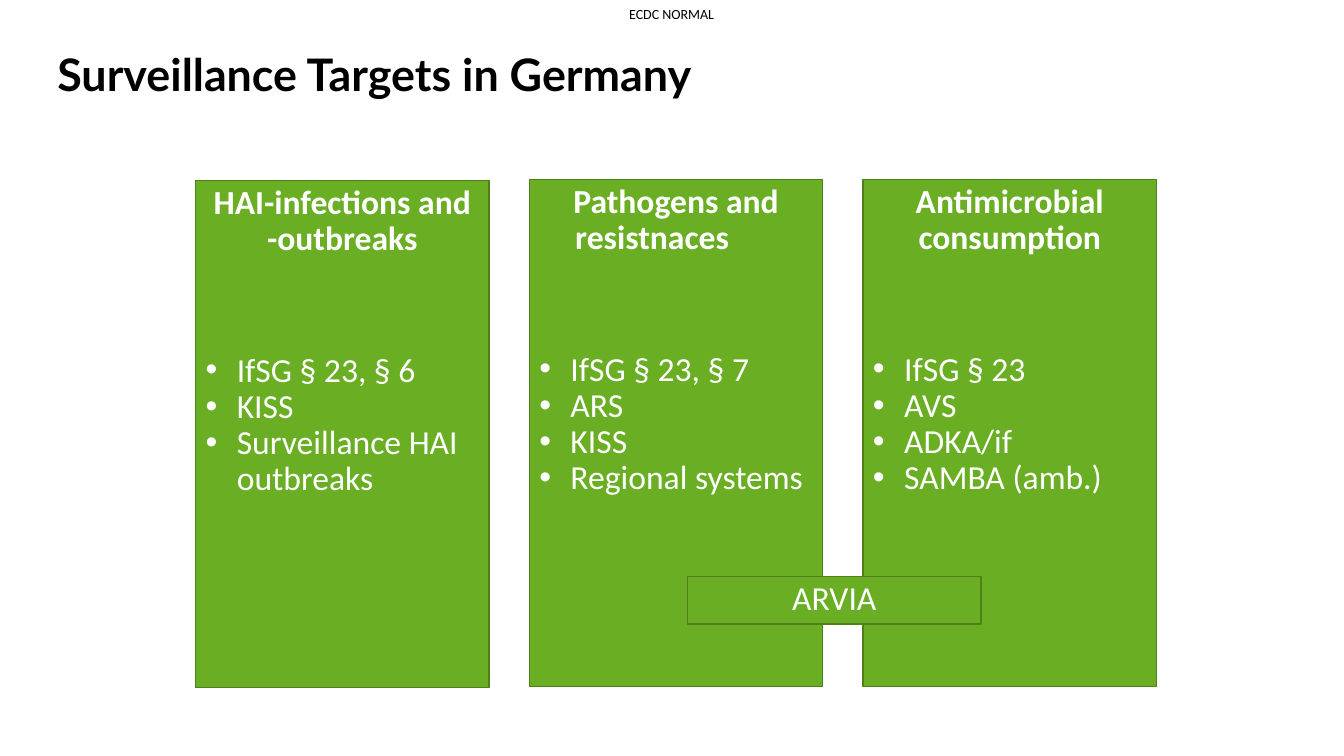
from lxml import etree
from pptx import Presentation
from pptx.dml.color import RGBColor
from pptx.enum import shapes, text
from pptx.oxml import ns
from pptx.util import Inches, Pt

CLASSIFICATION = "ECDC NORMAL"
TITLE = "Surveillance Targets in Germany"
TARGETS = [
    ("HAI-infections and -outbreaks",
     ["IfSG § 23, § 6", "KISS", "Surveillance HAI outbreaks"]),
    ("Pathogens and resistnaces\t",
     ["IfSG § 23, § 7", "ARS", "KISS", "Regional systems"]),
    ("Antimicrobial consumption",
     ["IfSG § 23", "AVS", "ADKA/if", "SAMBA (amb.)"]),
]
SHARED_SYSTEM = "ARVIA"

COLOURS = {"ink": "000000", "panel": "69AE23", "edge": "4E811A", "label": "FFFFFF"}
LEFT, PITCH, WIDTH, HEIGHT = 1.94, 3.31, 2.91, 5.03
TOPS = [1.79, 1.78, 1.78]
INDENT = 0.31
HEADING_GAP = 68


def colour(name):
    return RGBColor.from_string(COLOURS[name])


def write(paragraph, words, size, ink, font="Calibri", bold=False):
    paragraph.line_spacing = 0.9
    run = paragraph.add_run()
    run.text = words
    run.font.name = font
    run.font.size = Pt(size)
    run.font.bold = bold
    run.font.color.rgb = colour(ink)


def add_bullet(paragraph):
    properties = paragraph._p.get_or_add_pPr()
    properties.set("marL", str(Inches(INDENT)))
    properties.set("indent", str(-Inches(INDENT)))
    etree.SubElement(properties, ns.qn("a:buFont")).set("typeface", "Arial")
    etree.SubElement(properties, ns.qn("a:buChar")).set("char", "•")


def add_label(left, top, width, height):
    frame = slide.shapes.add_textbox(
        Inches(left), Inches(top), Inches(width), Inches(height)).text_frame
    frame.word_wrap = True
    return frame


def add_panel(left, top, height, words, bold):
    """Add a green box with a centred first line; return its text frame."""
    panel = slide.shapes.add_shape(
        shapes.MSO_SHAPE.RECTANGLE,
        Inches(left), Inches(top), Inches(WIDTH), Inches(height))
    panel.shadow.inherit = False
    panel.fill.solid()
    panel.fill.fore_color.rgb = colour("panel")
    panel.line.color.rgb = colour("edge")
    panel.line.width = Pt(1)
    frame = panel.text_frame
    frame.word_wrap = True
    frame.vertical_anchor = text.MSO_ANCHOR.TOP
    heading = frame.paragraphs[0]
    heading.alignment = text.PP_ALIGN.CENTER
    write(heading, words, 24, "label", bold=bold)
    return frame


prs = Presentation()
prs.slide_width, prs.slide_height = Inches(13.33), Inches(7.5)
slide = prs.slides.add_slide(prs.slide_layouts[6])

marking = add_label(6.24, 0.07, 0.88, 0.17)
marking.margin_left = marking.margin_right = 0
marking.margin_top = marking.margin_bottom = 0
write(marking.paragraphs[0], CLASSIFICATION, 10, "ink")

title = add_label(0.47, 0.24, 11.32, 1.04)
title.vertical_anchor = text.MSO_ANCHOR.MIDDLE
write(title.paragraphs[0], TITLE, 32, "ink", font="Lato", bold=True)

for column, (target, systems) in enumerate(TARGETS):
    body = add_panel(LEFT + column * PITCH, TOPS[column], HEIGHT, target, bold=True)
    for row, system in enumerate(systems):
        item = body.add_paragraph()
        item.alignment = text.PP_ALIGN.LEFT
        item.space_before = Pt(0 if row else HEADING_GAP)
        add_bullet(item)
        write(item, system, 24, "label")

add_panel(6.82, 5.72, 0.47, SHARED_SYSTEM, bold=False)

prs.save("out.pptx")
